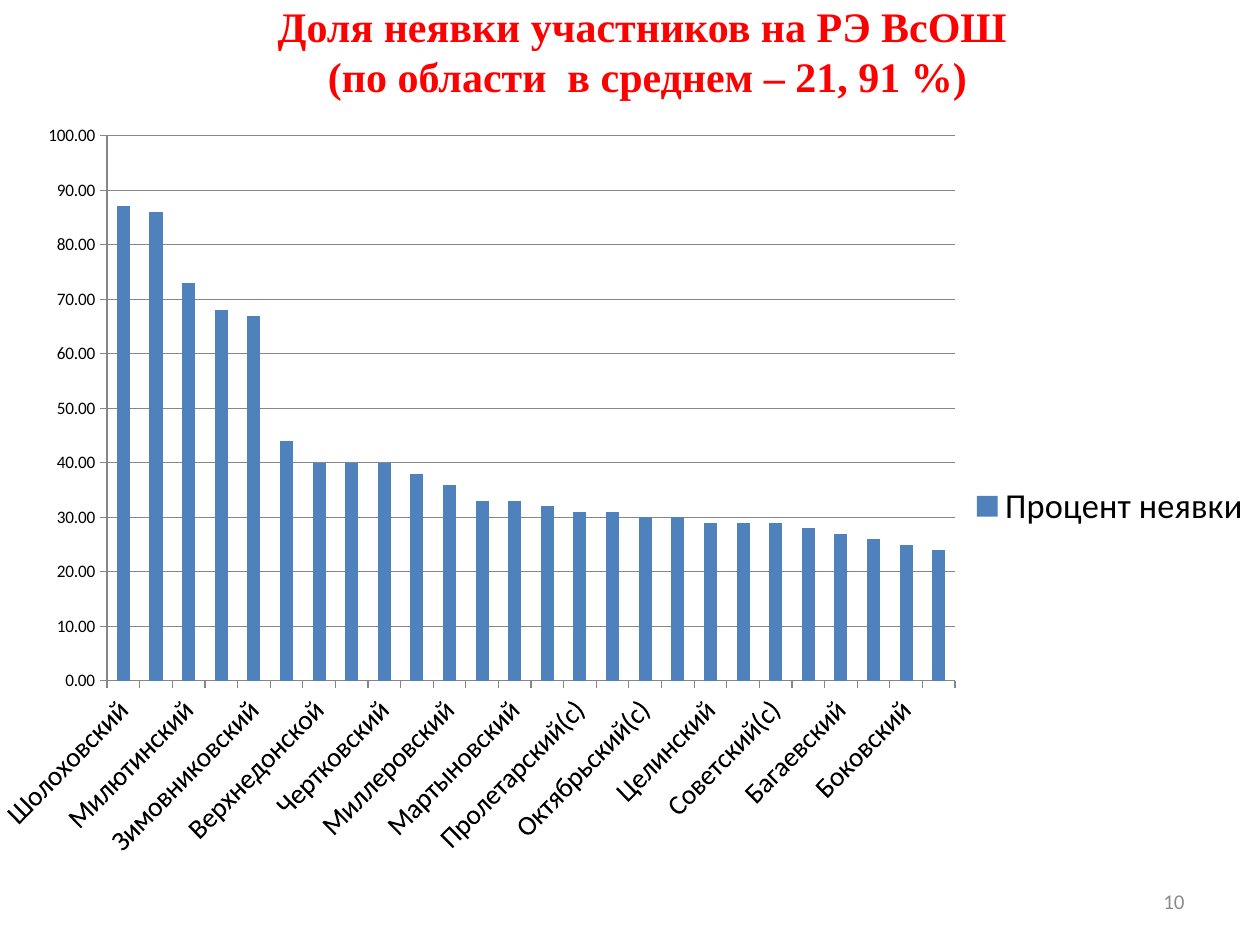
from lxml import etree
from pptx import Presentation
from pptx.chart.data import CategoryChartData
from pptx.dml.color import RGBColor
from pptx.enum.chart import XL_CHART_TYPE as ChartType, XL_LEGEND_POSITION as LegendPosition
from pptx.enum.chart import XL_TICK_MARK as TickMark
from pptx.enum.text import MSO_ANCHOR as Anchor, PP_ALIGN as Align
from pptx.oxml.ns import qn
from pptx.util import Emu, Pt

EMU_PER_PX = 914400 / 126

NO_SHOW_RATES = {
    "Шолоховский": 87, "Кашарский": 86, "Милютинский": 73,
    "Ремонтненский": 68, "Зимовниковский": 67, "Гуково": 44,
    "Верхнедонской": 40, "Тарасовский": 40, "Чертковский": 40,
    "Каменск-Шахтинский": 38, "Миллеровский": 36, "Зверево": 33,
    "Мартыновский": 33, "Константиновский": 32, "Пролетарский(с)": 31,
    "Тацинский": 31, "Октябрьский(с)": 30, "Песчанокопский": 30,
    "Целинский": 29, "Сальский": 29, "Советский(с)": 29,
    "Неклиновский": 28, "Багаевский": 27, "Веселовский": 26,
    "Боковский": 25, "Матвеево-Курганский": 24,
}


def px(length):
    return Emu(round(length * EMU_PER_PX))


def color(hex_string):
    return RGBColor.from_string(hex_string)


def manual_layout(inner=False, **fractions):
    """Build a c:layout element from fractions of the chart area."""
    layout = etree.Element(qn("c:layout"))
    manual = etree.SubElement(layout, qn("c:manualLayout"))
    settings = {"layoutTarget": "inner"} if inner else {}
    settings.update(xMode="edge", yMode="edge", **fractions)
    for tag, value in settings.items():
        etree.SubElement(manual, qn(f"c:{tag}")).set("val", str(value))
    return layout


class SlideBuilder:
    font = "Calibri"
    bar_color = "4F81BD"
    line_color = "868686"

    def __init__(self, slide):
        self.slide = slide

    def text(self, box, text, size, hex_color, align, font=None, bold=False):
        shape = self.slide.shapes.add_textbox(*map(px, box))
        frame = shape.text_frame
        frame.word_wrap = True
        frame.vertical_anchor = Anchor.MIDDLE
        paragraph = frame.paragraphs[0]
        paragraph.text = text
        paragraph.alignment = align
        paragraph.font.name = font or self.font
        paragraph.font.size = Pt(size)
        paragraph.font.bold = bold
        paragraph.font.color.rgb = color(hex_color)

    def line(self, line_format):
        line_format.color.rgb = color(self.line_color)
        line_format.width = Pt(0.75)

    def column_chart(self, box, series_name, values):
        data = CategoryChartData(number_format="0.00")
        data.categories = list(values)
        data.add_series(series_name, list(values.values()))
        chart = self.slide.shapes.add_chart(
            ChartType.COLUMN_CLUSTERED, *map(px, box), data).chart
        chart.has_title = False
        chart.font.name = self.font
        chart.font.size = Pt(10)
        chart.font.color.rgb = color("000000")

        # Columns and plot area
        plot = chart.plots[0]
        plot.gap_width = 150
        plot.vary_by_categories = False
        fill = plot.series[0].format.fill
        fill.solid()
        fill.fore_color.rgb = color(self.bar_color)
        plot_area = chart._chartSpace.chart.plotArea
        for layout in plot_area.findall(qn("c:layout")):
            plot_area.remove(layout)
        plot_area.insert(0, manual_layout(inner=True, x=0.066, y=0.013, w=0.687, h=0.665))

        # Axes
        category_axis, value_axis = chart.category_axis, chart.value_axis
        for axis in (category_axis, value_axis):
            axis.major_tick_mark = TickMark.OUTSIDE
            axis.minor_tick_mark = TickMark.NONE
            self.line(axis.format.line)
        category_axis.tick_labels.font.size = Pt(16)
        label_body = category_axis._element.find(qn("c:txPr")).find(qn("a:bodyPr"))
        label_body.set("rot", "-2700000")
        value_axis.minimum_scale = 0
        value_axis.maximum_scale = 100
        value_axis.major_unit = 10
        value_axis.tick_labels.number_format = "0.00"
        value_axis.tick_labels.number_format_is_linked = False
        value_axis.has_major_gridlines = True
        self.line(value_axis.major_gridlines.format.line)

        # Legend
        chart.has_legend = True
        legend = chart.legend
        legend.position = LegendPosition.RIGHT
        legend.include_in_layout = False
        legend.font.size = Pt(20)
        legend._element.find(qn("c:legendPos")).addnext(
            manual_layout(x=0.773, y=0.43, w=0.227, h=0.07))


def main():
    presentation = Presentation()
    presentation.slide_width, presentation.slide_height = px(1260), px(945)
    builder = SlideBuilder(presentation.slides.add_slide(presentation.slide_layouts[6]))

    # Title
    builder.text((35, -44, 1225, 189),
                 "Доля неявки участников на РЭ ВсОШ \v(по области  в среднем – 21, 91 %)",
                 24, "FF0000", Align.CENTER, font="Times New Roman", bold=True)
    # Slide number
    builder.text((903, 876, 294, 50), "10", 12, "8C8C8C", Align.RIGHT)
    # No-show rate by district
    builder.column_chart((0, 125, 1260, 820), "Процент неявки", NO_SHOW_RATES)

    presentation.save("out.pptx")


if __name__ == "__main__":
    main()
